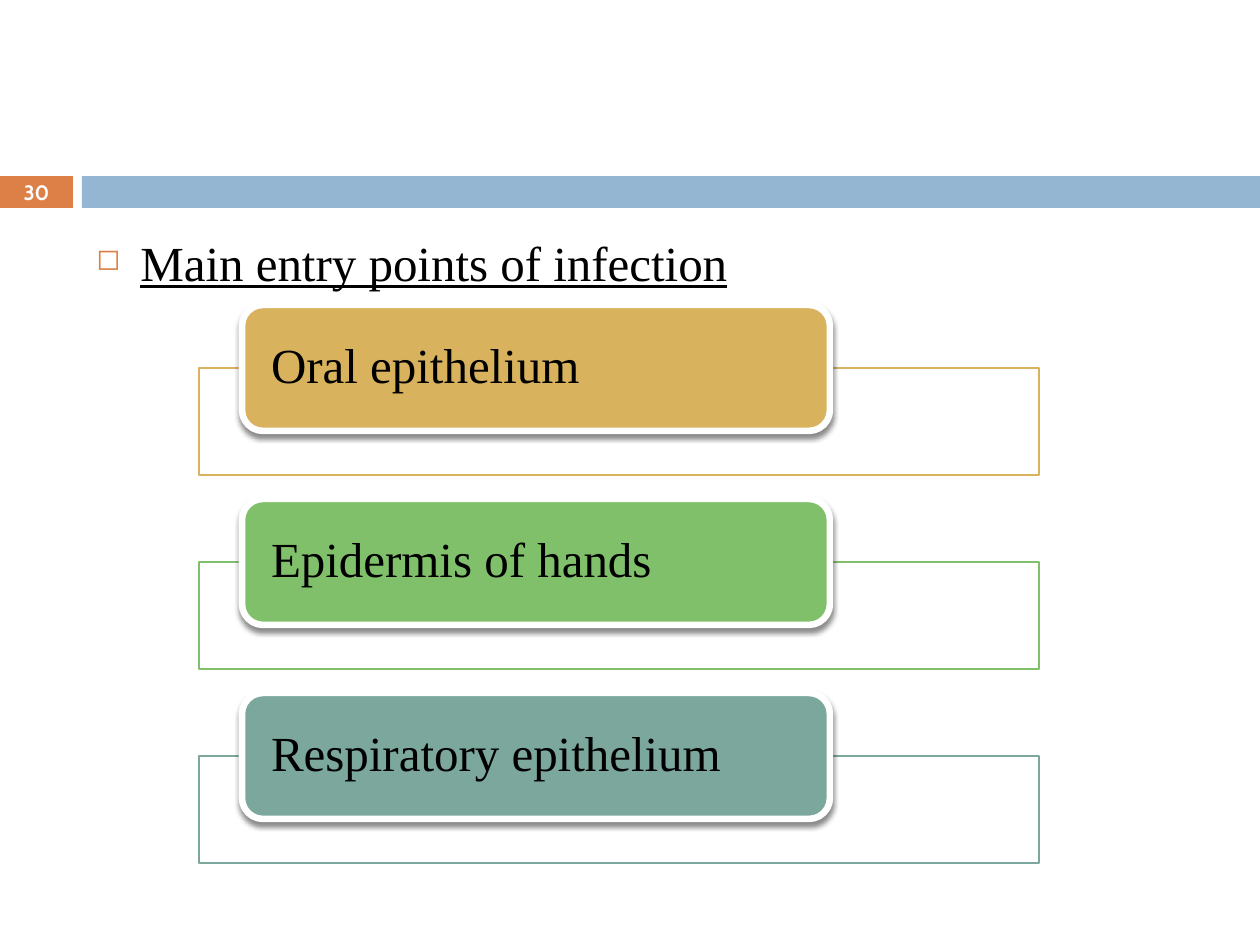
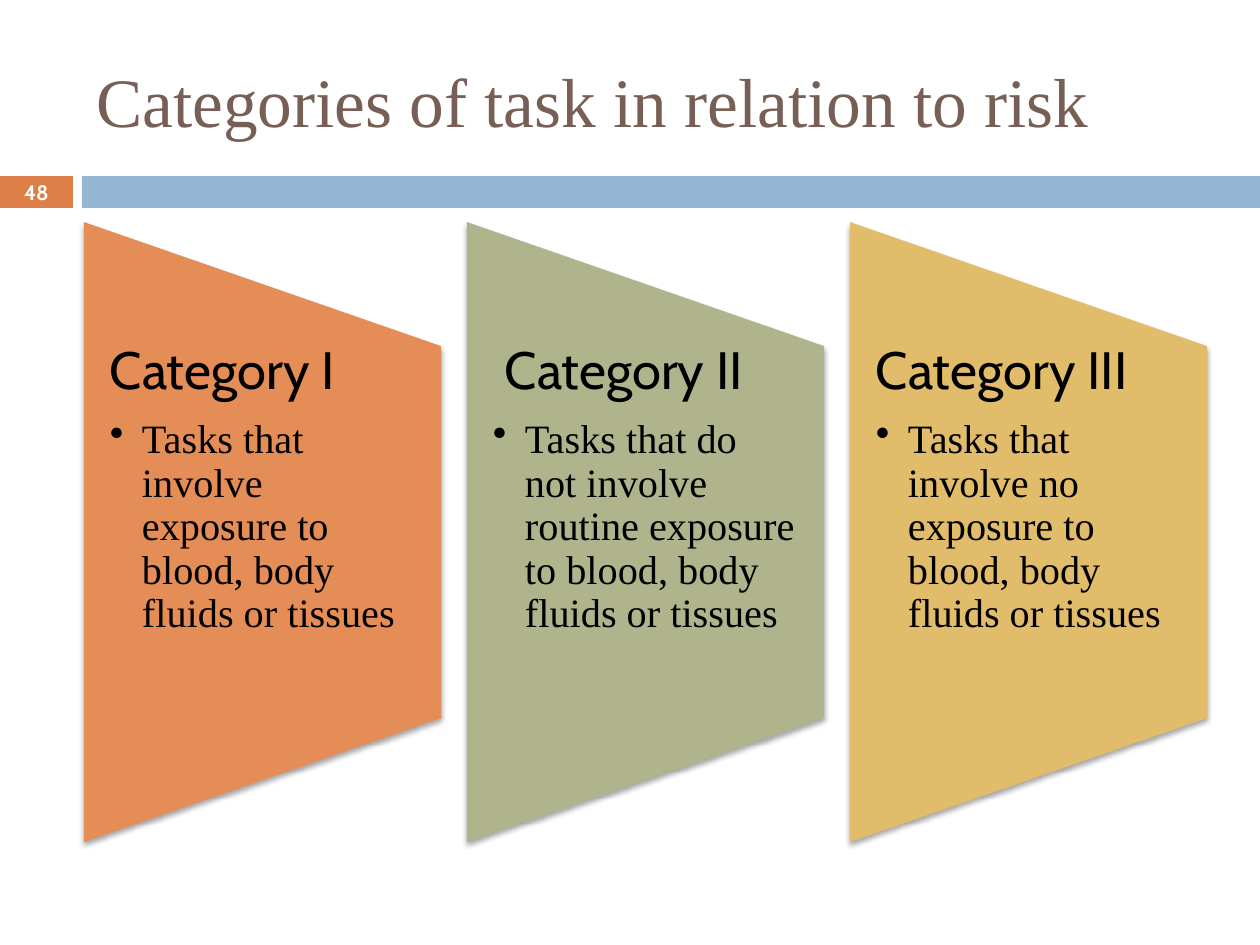
import dataclasses

import lxml.etree
import pptx
import pptx.dml.color
import pptx.enum.shapes
import pptx.enum.text
import pptx.oxml.ns
import pptx.util

SCALE = 914400 / 126
KIND = pptx.enum.shapes.MSO_SHAPE
ANCHOR = pptx.enum.text.MSO_ANCHOR
ALIGN = pptx.enum.text.PP_ALIGN


@dataclasses.dataclass(frozen=True)
class Theme:
    """Colours, fonts and type sizes of the deck."""
    black: str = "000000"
    white: str = "FFFFFF"
    brown: str = "775F55"
    orange: str = "DD8047"
    blue: str = "94B6D2"
    rows: tuple = ("D8B25C", "81C06B", "7BA79D")
    panels: tuple = ("E48D57", "AFB48D", "E1BC6B")
    serif: str = "Times New Roman"
    sans: str = "Cabin"
    title: float = 39.6
    head: float = 30
    body: float = 28
    task: float = 23
    number: float = 11.9


THEME = Theme()


def px(count):
    """Turn px into EMU."""
    return pptx.util.Emu(round(count * SCALE))


def rgb(code):
    """Turn a hex code into a colour."""
    return pptx.dml.color.RGBColor.from_string(code)


def node(parent, tag, **attrs):
    """Add a drawing element with attributes."""
    return lxml.etree.SubElement(parent, pptx.oxml.ns.qn("a:" + tag), attrs)


def apply(target, values):
    """Set each attribute from a dict."""
    for name, value in values.items():
        setattr(target, name, value)


def block(slide, box, fill, kind=KIND.RECTANGLE, line=None, width=0):
    """Add a filled preset shape without a shadow."""
    shape = slide.shapes.add_shape(kind, *map(px, box))
    shape.shadow.inherit = False
    shape.fill.solid()
    shape.fill.fore_color.rgb = rgb(fill)
    if line:
        shape.line.color.rgb = rgb(line)
        shape.line.width = pptx.util.Pt(width)
    else:
        shape.line.fill.background()
    return shape


def shade(shape, alpha, dist):
    """Cast a soft shadow straight down."""
    effect = shape.element.spPr.find(pptx.oxml.ns.qn("a:effectLst"))
    cast = node(effect, "outerShdw", blurRad=str(pptx.util.Pt(3)),
                dist=str(pptx.util.Pt(dist)), dir="5400000",
                algn="ctr", rotWithShape="0")
    tint = node(cast, "srgbClr", val=THEME.black)
    node(tint, "alpha", val=str(alpha * 1000))


def frame(slide, box, **values):
    """Add a wrapping text box and give its text frame."""
    text = slide.shapes.add_textbox(*map(px, box)).text_frame
    apply(text, {"word_wrap": True, **values})
    return text


def write(para, words, size, face=THEME.serif, color=THEME.black,
          font=None, **values):
    """Write one run into a paragraph and format both."""
    run = para.add_run()
    run.text = words
    apply(run.font, {"size": pptx.util.Pt(size), "name": face, **(font or {})})
    run.font.color.rgb = rgb(color)
    apply(para, {"alignment": ALIGN.LEFT, **values})


def bullet(para, mark, indent, color=None, size=100):
    """Hang a paragraph from a bullet mark."""
    props = para._p.get_or_add_pPr()
    props.set("marL", str(px(indent)))
    props.set("indent", str(px(-indent)))
    if color:
        node(node(props, "buClr"), "srgbClr", val=color)
    node(props, "buSzPct", val=str(size * 1000))
    node(props, "buChar", char=mark)


def band(slide, box, number):
    """Draw the number tag and the blue band."""
    left, top, width, height = box
    tag, start = 73, 82
    block(slide, (left, top, tag, height), THEME.orange)
    block(slide, (left + start, top, width - start, height), THEME.blue)
    text = frame(slide, (left, top - 1, tag, height + 2),
                 vertical_anchor=ANCHOR.MIDDLE)
    write(text.paragraphs[0], number, THEME.number, THEME.sans, THEME.white,
          {"bold": True}, alignment=ALIGN.CENTER)


def title(slide, box, words):
    """Write the slide title."""
    text = frame(slide, box, vertical_anchor=ANCHOR.MIDDLE)
    write(text.paragraphs[0], words, THEME.title, color=THEME.brown)


def lead(slide, box, words):
    """Write the underlined lead line."""
    para = frame(slide, box).paragraphs[0]
    write(para, words, THEME.body, font={"underline": True})
    bullet(para, "◻", 44, THEME.orange, 60)


def entry(slide, box, words, color):
    """Draw an outlined row with a raised label."""
    left, top, width, height = box
    block(slide, (left, top + 63, width, height - 63), THEME.white,
          line=color, width=1.5)
    label = block(slide, (left + 43, top, 588, 126), color,
                  KIND.ROUNDED_RECTANGLE, THEME.white, 3.75)
    shade(label, 45, 2.4)
    apply(label.text_frame, {
        "word_wrap": True, "vertical_anchor": ANCHOR.MIDDLE,
        "margin_left": px(23), "margin_right": px(23),
        "margin_top": 0, "margin_bottom": 0})
    write(label.text_frame.paragraphs[0], words, THEME.body, line_spacing=0.9)


def panel(slide, box, head, task, color):
    """Draw a tapered panel with a heading and a task."""
    left, top, width, height = box
    turn = (width - height) / 2
    shape = block(slide, (left + turn, top - turn, height, width), color,
                  KIND.FLOWCHART_MANUAL_OPERATION)
    shape.rotation = 270
    shade(shape, 35, 2)
    text = frame(slide, (left, top + 122, width, 372), margin_top=0,
                 margin_bottom=0, margin_left=px(26), margin_right=px(26))
    write(text.paragraphs[0], head, THEME.head, THEME.sans,
          line_spacing=0.9, space_after=pptx.util.Pt(10.5))
    para = text.add_paragraph()
    write(para, task, THEME.task, level=1, line_spacing=0.9)
    bullet(para, "•", 32)


def points(slide, box):
    """Build the slide of infection entry points."""
    left, top, width, height = box
    band(slide, (left, top + 176, width, 32), "30")
    lead(slide, (left + 84, top + 226, 1124, 614),
         "Main entry points of infection")
    names = ("Oral epithelium", "Epidermis of hands", "Respiratory epithelium")
    for row, (name, color) in enumerate(zip(names, THEME.rows)):
        entry(slide, (left + 199, top + 305 + 194 * row, 840, 170), name, color)


def risks(slide, box):
    """Build the slide of task categories."""
    left, top, width, height = box
    title(slide, (left + 84, top + 32, 1124, 136),
          "Categories of task in relation to risk")
    band(slide, (left, top + 176, width, 32), "48")
    tasks = (("Category I", "involve"),
             (" Category II", "do not involve routine"),
             ("Category III", "involve no"))
    for col, ((head, verb), color) in enumerate(zip(tasks, THEME.panels)):
        task = f"Tasks that {verb} exposure to blood, body fluids or tissues"
        panel(slide, (left + 84 + 383 * col, top + 222, 357, 620),
              head, task, color)


def main():
    """Build and save the deck."""
    deck = pptx.Presentation()
    page = (0, 0, 1260, 945)
    apply(deck, {"slide_width": px(page[2]), "slide_height": px(page[3])})
    for build in (points, risks):
        build(deck.slides.add_slide(deck.slide_layouts[6]), page)
    deck.save("out.pptx")


if __name__ == "__main__":
    main()
